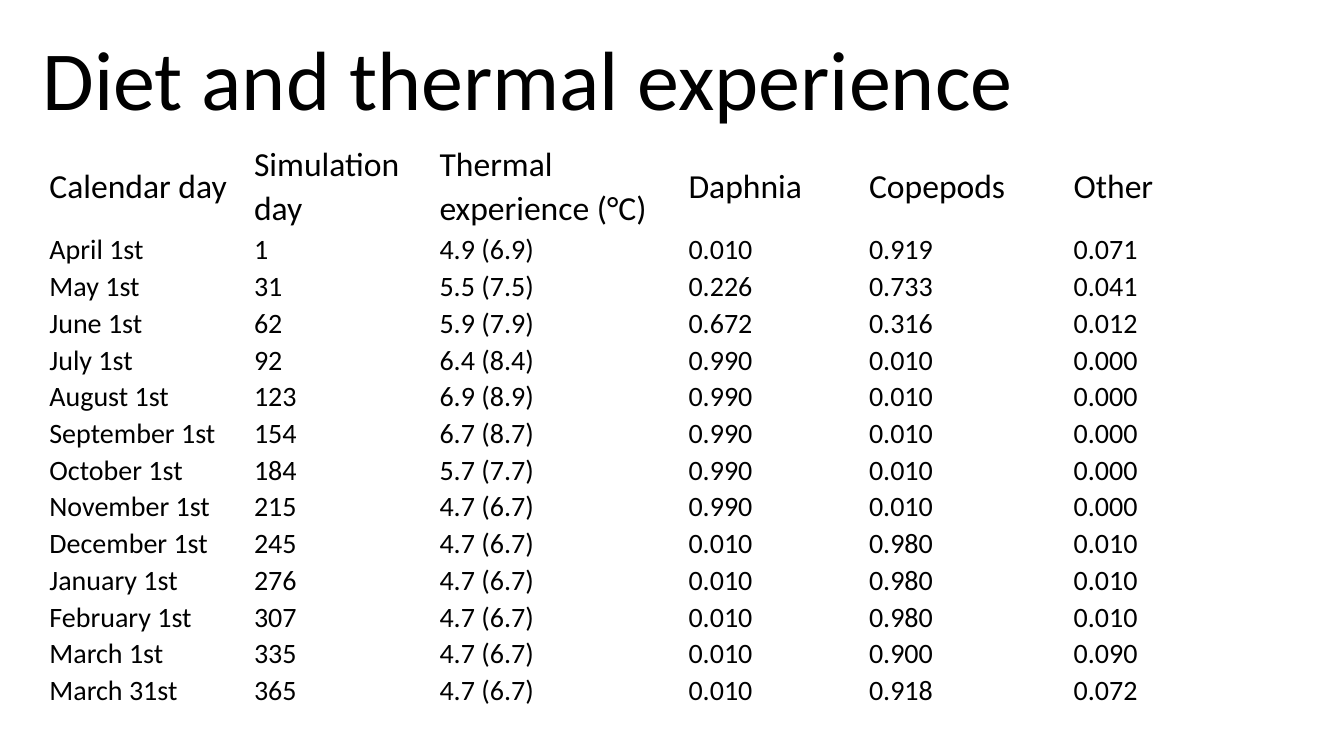
from pptx import Presentation
from pptx import util as u
from pptx.dml.color import RGBColor
from pptx.enum import text

PX = 9144
THEME = {
    "font": "Calibri",
    "ink": RGBColor(0, 0, 0),
    "background": RGBColor(255, 255, 255),
    "title": 60,
    "header": 24,
    "body": 20,
}


def px(length):
    return u.Emu(length * PX)


def write(frame, content, size, spacing):
    paragraph = frame.paragraphs[0]
    paragraph.alignment = text.PP_ALIGN.LEFT
    paragraph.line_spacing = spacing
    run = paragraph.add_run()
    run.text = content
    run.font.name = THEME["font"]
    run.font.size = u.Pt(size)
    run.font.bold = False
    run.font.color.rgb = THEME["ink"]


presentation = Presentation()
presentation.slide_width = px(1333)
presentation.slide_height = px(750)
slide = presentation.slides.add_slide(presentation.slide_layouts[5])
slide.background.fill.solid()
slide.background.fill.fore_color.rgb = THEME["background"]

title = slide.shapes.title
title.left, title.top, title.width, title.height = map(px, (32, 10, 1150, 145))
title.text_frame.word_wrap = True
title.text_frame.auto_size = text.MSO_AUTO_SIZE.NONE
title.text_frame.vertical_anchor = text.MSO_ANCHOR.MIDDLE
write(title.text_frame, "Diet and thermal experience", size=THEME["title"], spacing=0.9)

diet_rows = [
    ("Calendar day", "Simulation day", "Thermal experience (°C)", "Daphnia", "Copepods", "Other"),
    ("April 1st", "1", "4.9 (6.9)", "0.010", "0.919", "0.071"),
    ("May 1st", "31", "5.5 (7.5)", "0.226", "0.733", "0.041"),
    ("June 1st", "62", "5.9 (7.9)", "0.672", "0.316", "0.012"),
    ("July 1st", "92", "6.4 (8.4)", "0.990", "0.010", "0.000"),
    ("August 1st", "123", "6.9 (8.9)", "0.990", "0.010", "0.000"),
    ("September 1st", "154", "6.7 (8.7)", "0.990", "0.010", "0.000"),
    ("October 1st", "184", "5.7 (7.7)", "0.990", "0.010", "0.000"),
    ("November 1st", "215", "4.7 (6.7)", "0.990", "0.010", "0.000"),
    ("December 1st", "245", "4.7 (6.7)", "0.010", "0.980", "0.010"),
    ("January 1st", "276", "4.7 (6.7)", "0.010", "0.980", "0.010"),
    ("February 1st", "307", "4.7 (6.7)", "0.010", "0.980", "0.010"),
    ("March 1st", "335", "4.7 (6.7)", "0.010", "0.900", "0.090"),
    ("March 31st", "365", "4.7 (6.7)", "0.010", "0.918", "0.072"),
]
column_widths = [203, 184, 247, 179, 203, 203]
row_heights = [90] + [32] * (len(diet_rows) - 1)

diet_table = slide.shapes.add_table(
    len(diet_rows), len(column_widths),
    px(42), px(139), px(sum(column_widths)), px(sum(row_heights)),
).table
diet_table.first_row = False
diet_table.horz_banding = False
for column, width in zip(diet_table.columns, column_widths):
    column.width = px(width)

for row_index, (row, height, values) in enumerate(zip(diet_table.rows, row_heights, diet_rows)):
    row.height = px(height)
    is_header = row_index == 0
    for cell, value in zip(row.cells, values):
        cell.fill.background()
        cell.margin_left = cell.margin_right = px(7)
        cell.margin_top = cell.margin_bottom = 0
        cell.vertical_anchor = text.MSO_ANCHOR.MIDDLE if is_header else text.MSO_ANCHOR.TOP
        write(cell.text_frame, value, size=THEME["header" if is_header else "body"], spacing=1.07)

presentation.save("out.pptx")
